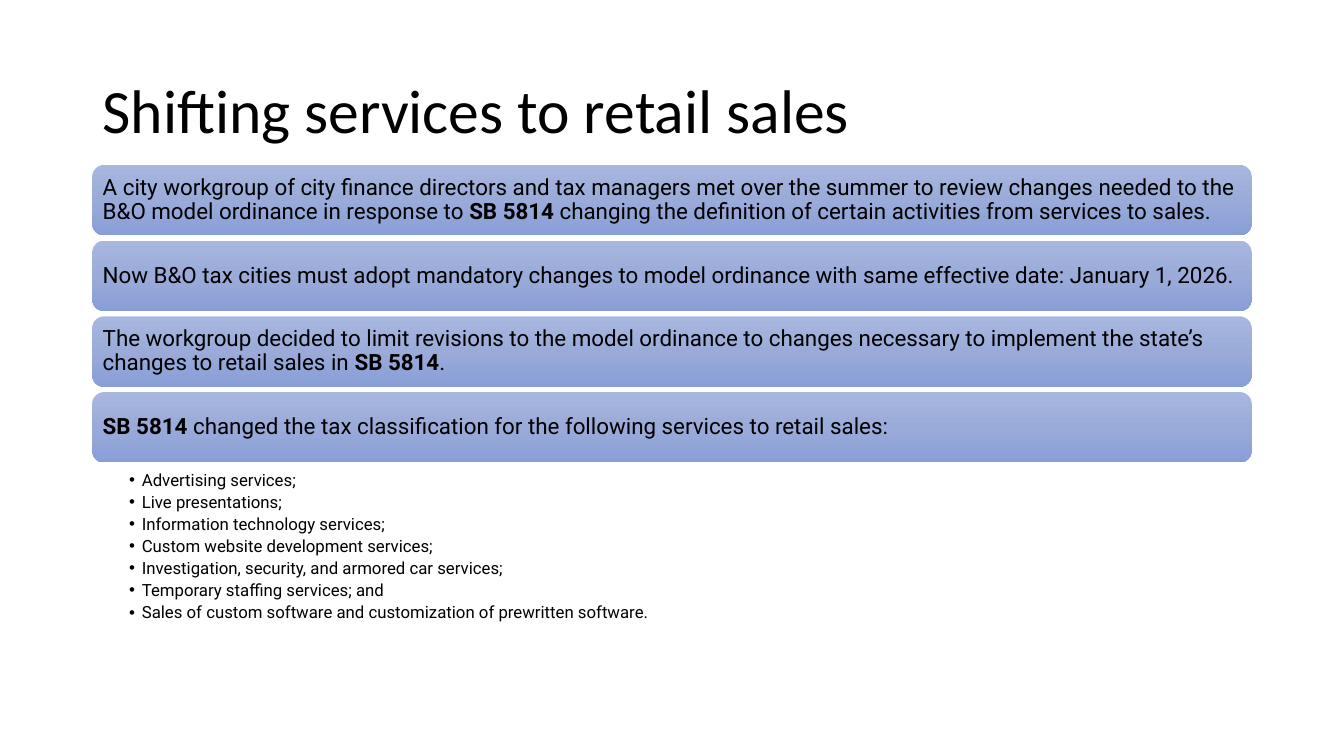
from copy import deepcopy

from pptx import Presentation
from pptx.dml.color import RGBColor
from pptx.enum.shapes import MSO_SHAPE as SHAPE
from pptx.enum.text import MSO_ANCHOR as ANCHOR, MSO_AUTO_SIZE as AUTOSIZE, PP_ALIGN as ALIGN
from pptx.oxml.ns import qn
from pptx.util import Pt

COLORS = {"text": "000000", "bar_top": "A8B7DF", "bar_middle": "9AABD9", "bar_bottom": "889ED7"}

TITLE = "Shifting services to retail sales"
BILL = "SB 5814"
STATEMENTS = [
    "A city workgroup of city finance directors and tax managers met over the summer to review "
    "changes needed to the B&O model ordinance in response to SB 5814 changing the definition "
    "of certain activities from services to sales.",
    "Now B&O tax cities must adopt mandatory changes to model ordinance with same effective date: "
    "January 1, 2026.",
    "The workgroup decided to limit revisions to the model ordinance to changes necessary to "
    "implement the state’s changes to retail sales in SB 5814.",
    "SB 5814 changed the tax classification for the following services to retail sales:",
]
SERVICES = [
    "Advertising services;",
    "Live presentations;",
    "Information technology services;",
    "Custom website development services;",
    "Investigation, security, and armored car services;",
    "Temporary staffing services; and",
    "Sales of custom software and customization of prewritten software.",
]


def place(shape, left, top, width, height):
    shape.left, shape.top, shape.width, shape.height = Pt(left), Pt(top), Pt(width), Pt(height)


def write(shape, lines, size, font="Roboto", bold_part=None, anchor=ANCHOR.MIDDLE,
          insets=(5, 5, 5, 5), after=0, bullet=None, hang=0):
    """Fill a shape with one paragraph per line; bold_part is set bold wherever it occurs."""
    frame = shape.text_frame
    frame.word_wrap = True
    frame.auto_size = AUTOSIZE.NONE
    frame.vertical_anchor = anchor
    (frame.margin_left, frame.margin_top,
     frame.margin_right, frame.margin_bottom) = map(Pt, insets)
    for index, line in enumerate(lines):
        paragraph = frame.add_paragraph() if index else frame.paragraphs[0]
        paragraph.alignment = ALIGN.LEFT
        paragraph.line_spacing = 0.9
        paragraph.space_before = Pt(0)
        paragraph.space_after = Pt(after)
        if bullet:
            paragraph.level = 1
            props = paragraph._p.get_or_add_pPr()
            props.set("marL", str(Pt(hang)))
            props.set("indent", str(-Pt(hang)))
            mark = props.makeelement(qn("a:buChar"), {"char": bullet})
            props.append(mark)
        pieces = line.partition(bold_part) if bold_part else (line,)
        for piece in filter(None, pieces):
            run = paragraph.add_run()
            run.text = piece
            run.font.name = font
            run.font.size = Pt(size)
            run.font.bold = piece == bold_part
            run.font.color.rgb = RGBColor.from_string(COLORS["text"])


def shade_bar(bar):
    """Three-stop vertical gradient."""
    bar.fill.gradient()
    bar.fill.gradient_angle = 270
    stop_list = bar._element.spPr.find(qn("a:gradFill")).find(qn("a:gsLst"))
    stop_list.insert(1, deepcopy(stop_list[0]))
    shades = ("bar_top", "bar_middle", "bar_bottom")
    for stop, shade, position in zip(bar.fill.gradient_stops, shades, (0, 0.5, 1)):
        stop.color.rgb = RGBColor.from_string(COLORS[shade])
        stop.position = position


def add_title(slide, left, top, width, height):
    heading = slide.shapes.title
    place(heading, left, top, width, height)
    write(heading, [TITLE], 44, font="Calibri", insets=(7.2, 3.6, 7.2, 3.6))


def add_statements(slide, left, top, width, height):
    pitch = 54.1
    bar_height = height - pitch * (len(STATEMENTS) - 1)
    for row, statement in enumerate(STATEMENTS):
        bar = slide.shapes.add_shape(SHAPE.ROUNDED_RECTANGLE, Pt(left), Pt(top + row * pitch),
                                     Pt(width), Pt(bar_height))
        bar.shadow.inherit = False
        bar.line.fill.background()
        shade_bar(bar)
        write(bar, [statement], 16, bold_part=BILL)


def add_services(slide, left, top, width, height):
    services = slide.placeholders[1]
    place(services, left, top, width, height)
    write(services, SERVICES, 12, anchor=ANCHOR.TOP, insets=(26.3, 1.5, 8.5, 1.5),
          after=2.8, bullet="•", hang=9)


def main():
    deck = Presentation()
    deck.slide_width, deck.slide_height = Pt(960), Pt(540)
    slide = deck.slides.add_slide(deck.slide_layouts[1])
    left, width = 66, 828
    add_title(slide, left, 28.75, width, 104.4)
    add_statements(slide, left, 117.8, width, 212.6)
    add_services(slide, left, 335.5, width, 114.5)
    deck.save("out.pptx")


if __name__ == "__main__":
    main()
